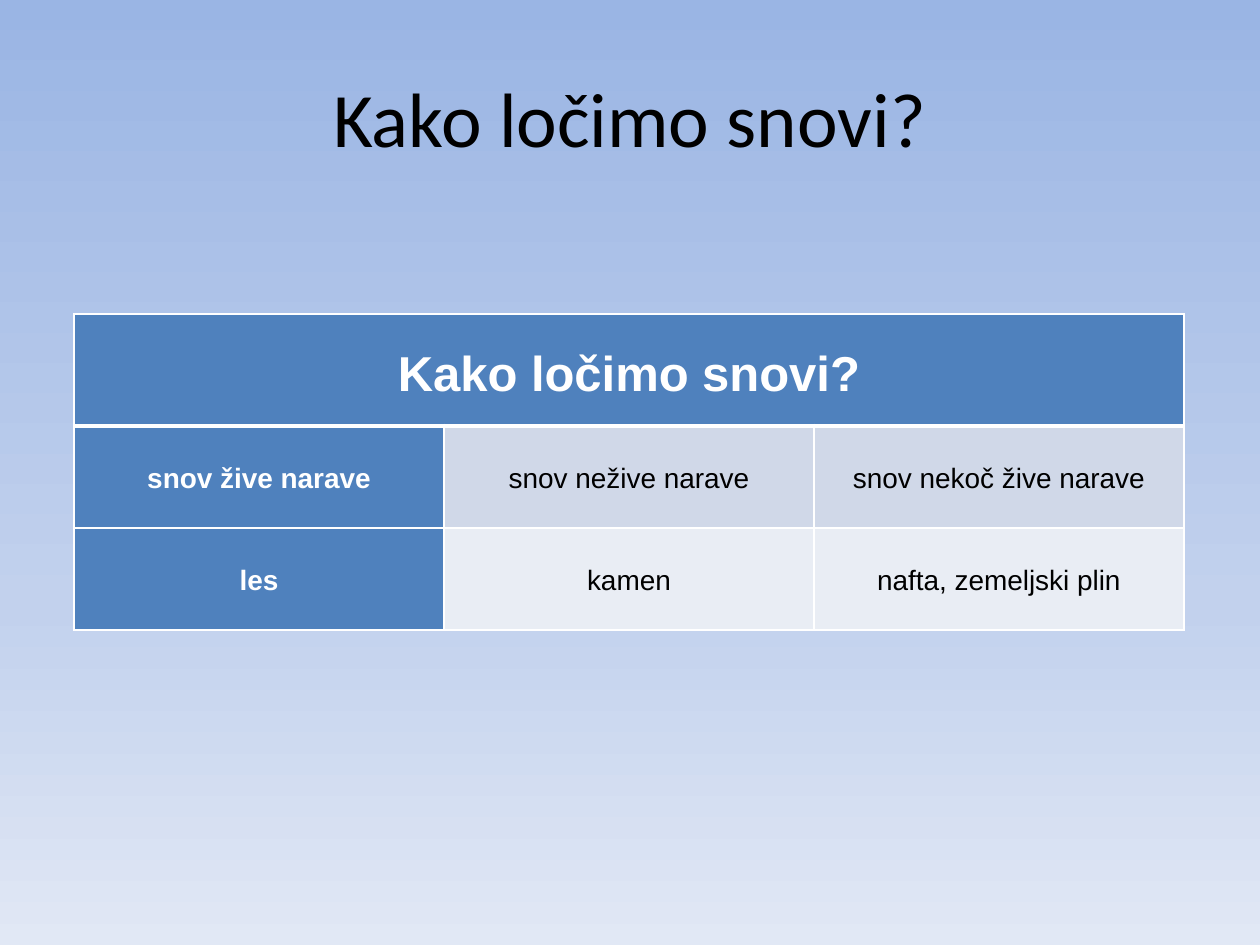
from copy import deepcopy

from lxml import etree
from pptx import Presentation
from pptx import util as u
from pptx.dml.color import RGBColor
from pptx.enum import text
from pptx.oxml.ns import qn

# Content
TITLE = "Kako ločimo snovi?"
HEADING = "Kako ločimo snovi?"
ROWS = [
    ("snov žive narave", "snov nežive narave", "snov nekoč žive narave"),
    ("les", "kamen", "nafta, zemeljski plin"),
]

# Look
SKY = [(0, "9AB5E4"), (0.64, "C2D1ED"), (1, "E1E8F5")]
BLUE, WHITE, BLACK = "4F81BD", "FFFFFF", "000000"
BANDS = ["D0D8E8", "E9EDF4"]
TABLE_LEFT, TABLE_TOP, COLUMN_WIDTH = 74, 314, 370
ROW_HEIGHTS = [112, 102, 102]


def px(n):
    return u.Emu(round(n * 914400 / 126))


def color(value):
    return RGBColor.from_string(value)


def write(frame, words, size, font="Arial", ink=BLACK, bold=False, spacing=1.0):
    paragraph = frame.paragraphs[0]
    paragraph.alignment = text.PP_ALIGN.CENTER
    paragraph.line_spacing = spacing
    run = paragraph.add_run()
    run.text = words
    run.font.size = u.Pt(size)
    run.font.name = font
    run.font.bold = bold
    run.font.color.rgb = color(ink)


def set_borders(cell, top=1, bottom=1):
    properties = cell._tc.get_or_add_tcPr()
    widths = {"a:lnL": 1, "a:lnR": 1, "a:lnT": top, "a:lnB": bottom}
    for place, (side, points) in enumerate(widths.items()):
        line = etree.Element(qn(side), w=str(u.Pt(points)))
        fill = etree.SubElement(line, qn("a:solidFill"))
        etree.SubElement(fill, qn("a:srgbClr"), val=WHITE)
        properties.insert(place, line)


def fill_cell(cell, words, size, fill, **look):
    cell.fill.solid()
    cell.fill.fore_color.rgb = color(fill)
    cell.vertical_anchor = text.MSO_ANCHOR.MIDDLE
    cell.margin_left = cell.margin_right = px(9)
    cell.margin_top = cell.margin_bottom = 0
    write(cell.text_frame, words, size, spacing=1.15, **look)


presentation = Presentation()
presentation.slide_width, presentation.slide_height = px(1260), px(945)
slide = presentation.slides.add_slide(presentation.slide_layouts[6])

# Background gradient, top to bottom
sky = slide.background.fill
sky.gradient()
sky.gradient_angle = 270
stops = slide._element.find(".//" + qn("a:gsLst"))
stops.append(deepcopy(stops[0]))
for stop, (position, shade) in zip(sky.gradient_stops, SKY):
    stop.position = position
    stop.color.rgb = color(shade)

# Title
title = slide.shapes.add_textbox(px(63), px(38), px(1134), px(158)).text_frame
title.word_wrap = True
title.vertical_anchor = text.MSO_ANCHOR.MIDDLE
write(title, TITLE, 44, font="Calibri")

# Table
columns = len(ROWS[0])
table = slide.shapes.add_table(
    len(ROW_HEIGHTS), columns, px(TABLE_LEFT), px(TABLE_TOP),
    px(columns * COLUMN_WIDTH), px(sum(ROW_HEIGHTS))).table
for row, height in zip(table.rows, ROW_HEIGHTS):
    row.height = px(height)

# Heading across all columns
heading = table.cell(0, 0)
heading.merge(table.cell(0, columns - 1))
fill_cell(heading, HEADING, 28, BLUE, ink=WHITE, bold=True)
for c in range(columns):
    set_borders(table.cell(0, c), bottom=3)

# Body, with a blue first column
for r, (row, band) in enumerate(zip(ROWS, BANDS), start=1):
    for c, words in enumerate(row):
        first = c == 0
        cell = table.cell(r, c)
        fill_cell(cell, words, 16, BLUE if first else band,
                  ink=WHITE if first else BLACK, bold=first)
        set_borders(cell, top=3 if r == 1 else 1)

presentation.save("out.pptx")
